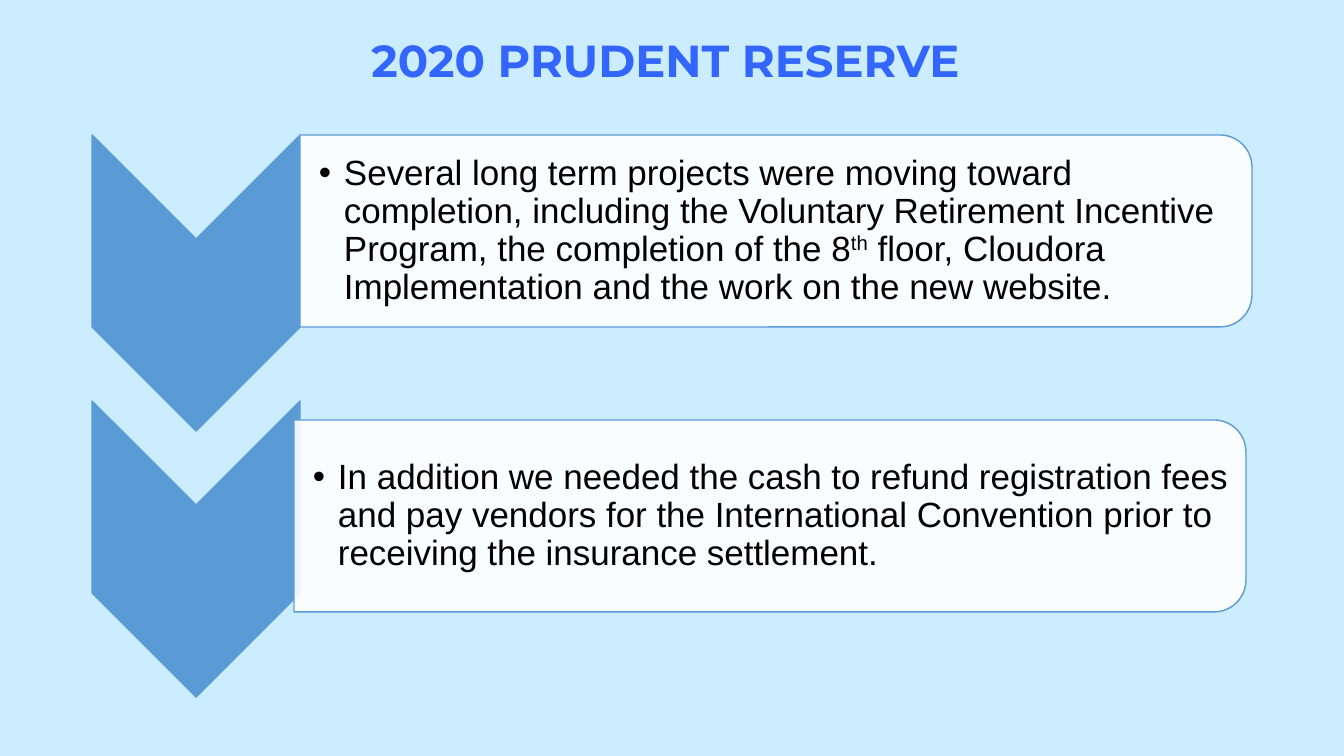
from lxml.etree import SubElement
from pptx import Presentation
from pptx.dml.color import RGBColor
from pptx.enum.shapes import MSO_SHAPE
from pptx.enum.text import MSO_ANCHOR, PP_ALIGN
from pptx.oxml.ns import qn
from pptx.util import Emu, Pt

PX_PER_INCH = 100.8
SKY, BLUE, WHITE, BLACK, TITLE_BLUE = "CCECFF", "5B9BD5", "FFFFFF", "000000", "3366FF"

PROJECTS = [
    ("Several long term projects were moving toward completion, including the "
     "Voluntary Retirement Incentive Program, the completion of the 8", 0),
    ("th", 30),
    (" floor, Cloudora Implementation and the work on the new website.", 0),
]
REFUNDS = [
    ("In addition we needed the cash to refund registration fees and pay vendors "
     "for the International Convention prior to receiving the insurance settlement.", 0),
]


def px(length):
    return Emu(round(length * 914400 / PX_PER_INCH))


def color(value):
    return RGBColor.from_string(value)


def add_text(page, box, spans, font, size, fill, bold=False, align=PP_ALIGN.LEFT,
             insets=(10, 5, 10, 5), bullet_indent=0):
    """Spans are pairs of text and superscript percentage."""
    frame = page.shapes.add_textbox(*map(px, box)).text_frame
    frame.word_wrap = True
    frame.vertical_anchor = MSO_ANCHOR.MIDDLE
    (frame.margin_left, frame.margin_top,
     frame.margin_right, frame.margin_bottom) = map(px, insets)
    para = frame.paragraphs[0]
    para.alignment = align
    para.line_spacing = 0.9
    if bullet_indent:
        properties = para._p.get_or_add_pPr()
        properties.set("marL", str(px(bullet_indent)))
        properties.set("indent", str(-px(bullet_indent)))
        SubElement(properties, qn("a:buFont")).set("typeface", "Arial")
        SubElement(properties, qn("a:buChar")).set("char", "•")
    for text, superscript in spans:
        span = para.add_run()
        span.text = text
        span.font.name = font
        span.font.size = Pt(size)
        span.font.bold = bold
        span.font.color.rgb = color(fill)
        if superscript:
            span._r.get_or_add_rPr().set("baseline", str(superscript * 1000))


def add_turned_shape(page, kind, box, fill, opacity=100):
    """Place a shape turned by 90 degrees so that it fills the box as seen."""
    left, top, width, height = box
    shift = (width - height) / 2
    shape = page.shapes.add_shape(
        kind, px(left + shift), px(top - shift), px(height), px(width))
    shape.rotation = 90
    shape.shadow.inherit = False
    shape.fill.solid()
    shape.fill.fore_color.rgb = color(fill)
    shape.line.color.rgb = color(BLUE)
    shape.line.width = Pt(1)
    if opacity < 100:
        tint = shape._element.spPr.find(qn("a:solidFill"))[0]
        SubElement(tint, qn("a:alpha")).set("val", str(opacity * 1000))


def add_title(page, box):
    # The trailing space sets the title slightly left of centre
    add_text(page, box, [("2020 PRUDENT RESERVE ", 0)], "Montserrat", 32, TITLE_BLUE,
             bold=True, align=PP_ALIGN.CENTER)


def add_chevron(page, box):
    add_turned_shape(page, MSO_SHAPE.CHEVRON, box, BLUE)


def add_card(page, box, spans):
    left, top, width, height = box
    add_turned_shape(page, MSO_SHAPE.ROUND_2_SAME_RECTANGLE, box, WHITE, opacity=90)
    add_text(page, (left, top + 9, width - 9, height - 18), spans, "Arial", 25, BLACK,
             insets=(19, 2, 2, 2), bullet_indent=25)


def main():
    deck = Presentation()
    deck.slide_width, deck.slide_height = px(1344), px(756)
    page = deck.slides.add_slide(deck.slide_layouts[6])
    page.background.fill.solid()
    page.background.fill.fore_color.rgb = color(SKY)

    add_title(page, (0, 4, 1344, 118))

    # Two steps: chevron top, card left and top, card text
    steps = [(135, 300, 135, PROJECTS), (401, 294, 420, REFUNDS)]
    for chevron_top, card_left, card_top, spans in steps:
        add_chevron(page, (92, chevron_top, 208, 296))
        add_card(page, (card_left, card_top, 952, 192), spans)

    deck.save("out.pptx")


if __name__ == "__main__":
    main()
